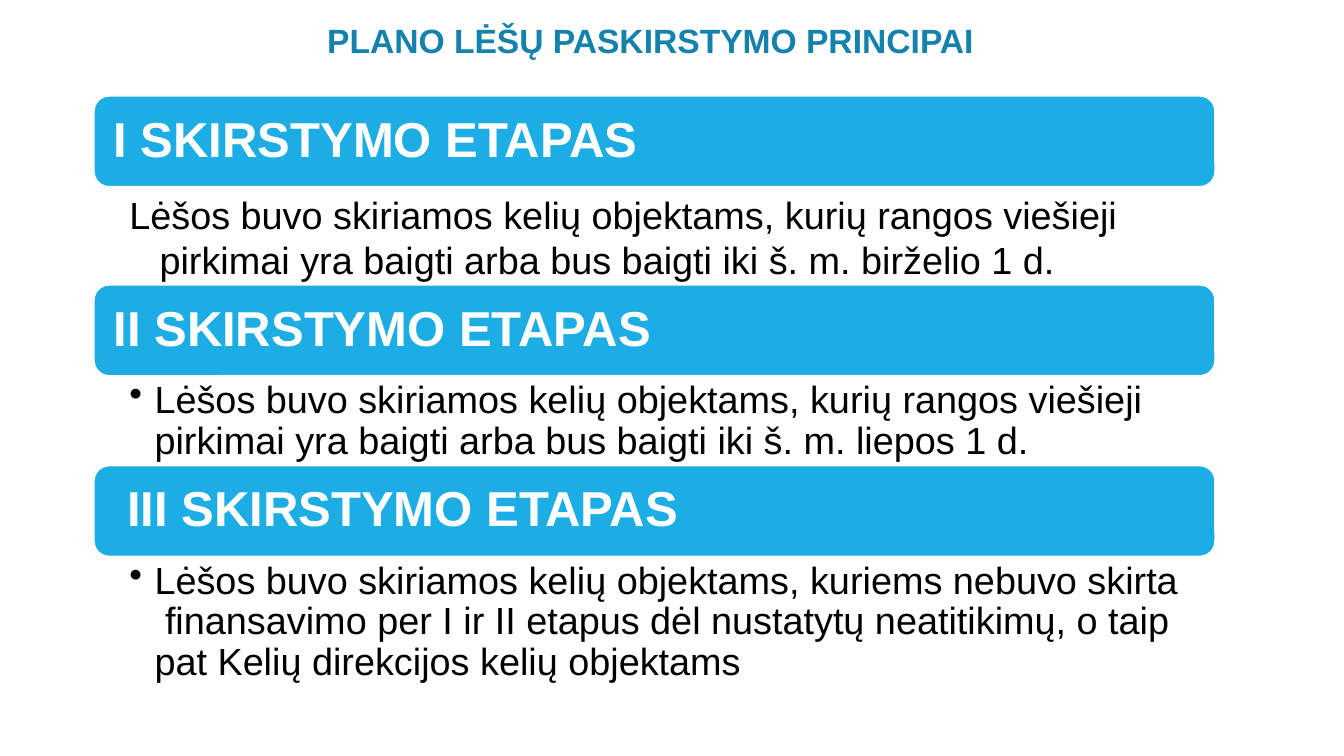
from dataclasses import dataclass

from lxml import etree
from pptx import Presentation
from pptx.dml.color import RGBColor
from pptx.enum.shapes import MSO_SHAPE
from pptx.enum.text import MSO_ANCHOR, MSO_AUTO_SIZE, PP_ALIGN
from pptx.oxml.ns import qn
from pptx.util import Inches, Pt

ROUNDED = MSO_SHAPE.ROUNDED_RECTANGLE
MIDDLE, TOP = MSO_ANCHOR.MIDDLE, MSO_ANCHOR.TOP
LEFT = PP_ALIGN.LEFT
GROW = MSO_AUTO_SIZE.SHAPE_TO_FIT_TEXT


@dataclass(frozen=True)
class Theme:
    font: str = "Arial"
    bar: RGBColor = RGBColor(0x1C, 0xAD, 0xE4)
    title: RGBColor = RGBColor(0x14, 0x82, 0xAC)
    light: RGBColor = RGBColor(0xFF, 0xFF, 0xFF)
    dark: RGBColor = RGBColor(0, 0, 0)
    title_size: int = 24
    heading_size: int = 35
    detail_size: int = 27


@dataclass(frozen=True)
class Stage:
    heading: str
    detail: str
    detail_share: float
    hanging: float = 0.25
    bulleted: bool = True


THEME = Theme()
SLIDE_W, SLIDE_H = Inches(13.33), Inches(7.5)

# Shares of the slide's width and height
STAGE_LEFT, STAGE_WIDTH = 0.07, 0.834
FIRST_TOP, BAR_SHARE = 0.127, 0.12
TITLE_BOX = (0.236, 0.02, 0.501, 0.067)

STAGES = (
    Stage("I SKIRSTYMO ETAPAS",
          "Lėšos buvo skiriamos kelių objektams, kurių rangos viešieji pirkimai "
          "yra baigti arba bus baigti iki š. m. birželio 1 d.",
          0.13, hanging=0.3, bulleted=False),
    Stage("II SKIRSTYMO ETAPAS",
          "Lėšos buvo skiriamos kelių objektams, kurių rangos viešieji pirkimai "
          "yra baigti arba bus baigti iki š. m. liepos 1 d.",
          0.119),
    Stage(" III SKIRSTYMO ETAPAS",
          "Lėšos buvo skiriamos kelių objektams, kuriems nebuvo skirta  finansavimo "
          "per I ir II etapus dėl nustatytų neatitikimų, o taip pat Kelių "
          "direkcijos kelių objektams",
          0.17),
)


def place(left: float, top: float, width: float, height: float) -> tuple[int, ...]:
    """Turn shares of the slide into lengths."""
    return (round(left * SLIDE_W), round(top * SLIDE_H),
            round(width * SLIDE_W), round(height * SLIDE_H))


def set_frame(frame, anchor, side: float, right: float, edge: float) -> None:
    frame.word_wrap = True
    frame.vertical_anchor = anchor
    frame.margin_left, frame.margin_right = Inches(side), Inches(right)
    frame.margin_top = frame.margin_bottom = Inches(edge)


def add_run(paragraph, text: str, size: int, color: RGBColor, bold: bool = False) -> None:
    run = paragraph.add_run()
    run.text = text
    run.font.name = THEME.font
    run.font.size = Pt(size)
    run.font.bold = bold
    run.font.color.rgb = color


def hang(paragraph, indent: float, bulleted: bool) -> None:
    """Give a hanging indent, with a bullet if wanted."""
    properties = paragraph._p.get_or_add_pPr()
    properties.set("marL", str(Inches(indent)))
    properties.set("indent", str(-Inches(indent)))
    if bulleted:
        etree.SubElement(properties, qn("a:buChar")).set("char", "•")


def add_title(slide, text: str) -> None:
    frame = slide.shapes.add_textbox(*place(*TITLE_BOX)).text_frame
    frame.word_wrap = False
    frame.auto_size = GROW
    add_run(frame.paragraphs[0], text, THEME.title_size, THEME.title, bold=True)


def add_bar(slide, stage: Stage, top: float) -> None:
    bar = slide.shapes.add_shape(ROUNDED, *place(STAGE_LEFT, top, STAGE_WIDTH, BAR_SHARE))
    bar.shadow.inherit = False
    bar.fill.solid()
    bar.fill.fore_color.rgb = THEME.bar
    bar.line.color.rgb = THEME.light
    bar.line.width = Pt(1)
    set_frame(bar.text_frame, MIDDLE, 0.15, 0.15, 0.15)
    heading = bar.text_frame.paragraphs[0]
    heading.alignment = LEFT
    heading.line_spacing = 0.9
    add_run(heading, stage.heading, THEME.heading_size, THEME.light, bold=True)


def add_detail(slide, stage: Stage, top: float) -> None:
    box = slide.shapes.add_textbox(*place(STAGE_LEFT, top, STAGE_WIDTH, stage.detail_share))
    set_frame(box.text_frame, TOP, 0.35, 0.27, 0.05)
    detail = box.text_frame.paragraphs[0]
    if stage.bulleted:
        detail.level = 1
        detail.line_spacing = 0.9
    hang(detail, stage.hanging, stage.bulleted)
    add_run(detail, stage.detail, THEME.detail_size, THEME.dark)


def main() -> None:
    deck = Presentation()
    deck.slide_width, deck.slide_height = SLIDE_W, SLIDE_H
    slide = deck.slides.add_slide(deck.slide_layouts[6])
    top = FIRST_TOP
    for stage in STAGES:
        add_bar(slide, stage, top)
        add_detail(slide, stage, top + BAR_SHARE)
        top += BAR_SHARE + stage.detail_share
    add_title(slide, "PLANO LĖŠŲ PASKIRSTYMO PRINCIPAI")
    deck.save("out.pptx")


if __name__ == "__main__":
    main()
